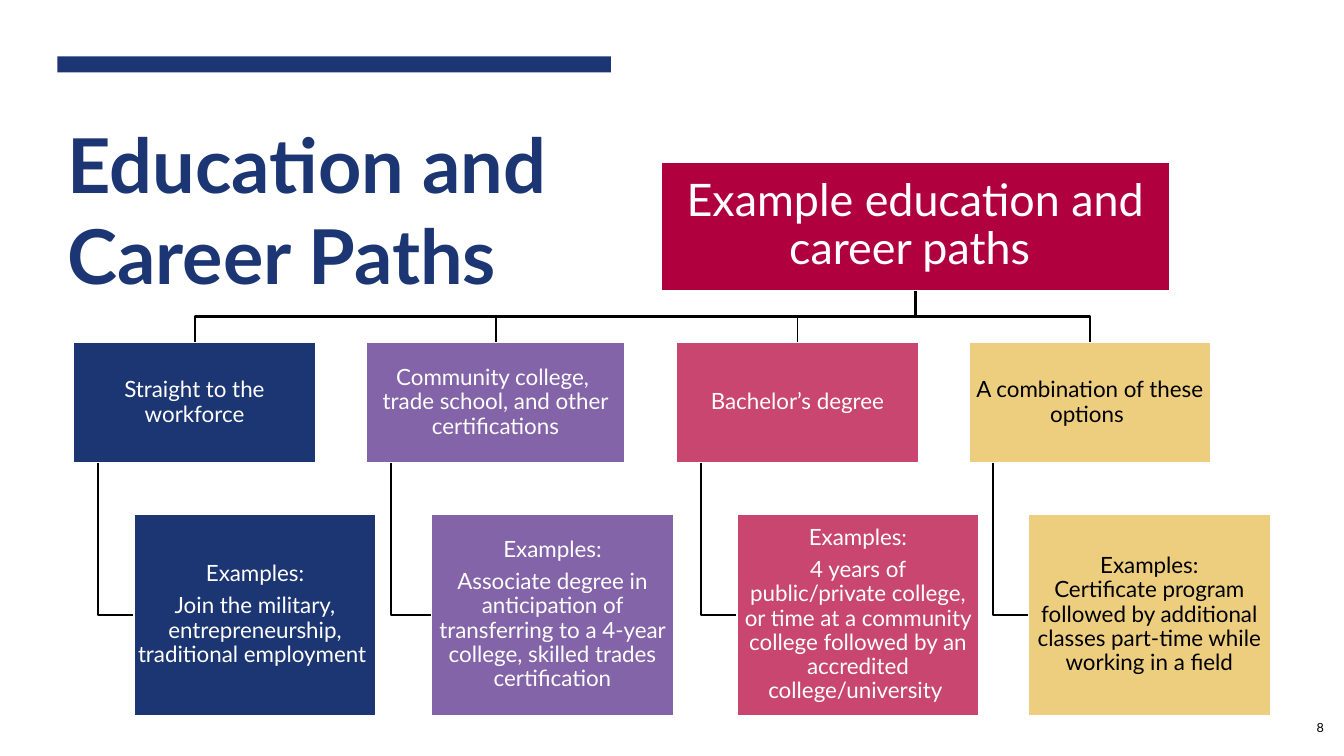
from dataclasses import dataclass

from pptx import Presentation
from pptx.dml.color import RGBColor
from pptx.enum.shapes import MSO_SHAPE as Preset
from pptx.enum.text import MSO_ANCHOR as Anchor, PP_ALIGN as Align
from pptx.shapes.autoshape import Shape
from pptx.slide import Slide
from pptx.util import Pt

PX = 9144  # EMU in one px, 100 px to the inch
FONT = "Lato"
NAVY, CRIMSON, PURPLE, ROSE, SAND = "1C3674", "B1003E", "8464A9", "C8466F", "EDCE7F"
WHITE, BLACK = "FFFFFF", "000000"

# Rows of the chart
ROOT_LEFT, ROOT_TOP, ROOT_WIDTH, ROOT_HEIGHT = 656, 161, 504, 127
ROOT_CENTRE, ROOT_BOTTOM = ROOT_LEFT + ROOT_WIDTH // 2, ROOT_TOP + ROOT_HEIGHT
BUS_Y = 314
PATH_TOP, PATH_HEIGHT = 340, 119
EXAMPLE_TOP, EXAMPLE_WIDTH, EXAMPLE_HEIGHT = 510, 240, 200


@dataclass
class CareerPath:
    left: int
    width: int
    example_left: int
    fill: str
    ink: str
    name: str
    examples: str
    branch_weight: float = 1.5


# "\n" starts a paragraph, "\v" breaks a line
PATHS = [
    CareerPath(73, 240, 133, NAVY, WHITE, "Straight to the workforce",
               "Examples:\nJoin the military, entrepreneurship, traditional employment "),
    CareerPath(363, 257, 428, PURPLE, WHITE,
               "Community college, \vtrade school, and other certifications",
               "Examples:\nAssociate degree in anticipation of transferring to a 4-year "
               "college, skilled trades certification"),
    CareerPath(671, 240, 731, ROSE, WHITE, "Bachelor’s degree",
               "Examples:\n4 years of public/private college, or time at a community "
               "college followed by an accredited college/university ", 0.5),
    CareerPath(961, 240, 1020, SAND, BLACK, "A combination of these options ",
               "Examples:\vCertificate program followed by additional classes part-time "
               "while working in a field"),
]


def colour(value: str) -> RGBColor:
    return RGBColor.from_string(value)


def write(shape: Shape, text: str, size: int, ink: str, align: Align, bold: bool = False) -> None:
    frame = shape.text_frame
    frame.word_wrap = True
    frame.vertical_anchor = Anchor.MIDDLE
    frame.text = text
    for para in frame.paragraphs:
        para.alignment = align
        for span in para.runs:
            font = span.font
            font.name, font.size, font.bold = FONT, Pt(size), bold
            font.color.rgb = colour(ink)


def add_bar(page: Slide, left: int, top: int, width: int, height: int, fill: str) -> Shape:
    bar = page.shapes.add_shape(Preset.RECTANGLE, left * PX, top * PX, width * PX, height * PX)
    bar.shadow.inherit = False
    bar.fill.solid()
    bar.fill.fore_color.rgb = colour(fill)
    bar.line.fill.background()
    return bar


def add_box(page: Slide, left: int, top: int, width: int, height: int,
            fill: str, ink: str, text: str, size: int = 16) -> None:
    box = add_bar(page, left, top, width, height, fill)
    box.line.color.rgb = colour(WHITE)
    box.line.width = Pt(1)
    write(box, text, size, ink, Align.CENTER)
    frame = box.text_frame
    frame.margin_left = frame.margin_right = frame.margin_top = frame.margin_bottom = 3 * PX
    for para in frame.paragraphs:
        para.line_spacing = 0.9
        para.space_after = Pt(0.35 * size)


def add_text(page: Slide, left: int, top: int, width: int, height: int,
             text: str, size: int, ink: str, align: Align, bold: bool = False) -> None:
    label = page.shapes.add_textbox(left * PX, top * PX, width * PX, height * PX)
    write(label, text, size, ink, align, bold)


def add_bend(page: Slide, points: list[tuple[int, int]], weight: float = 1.5) -> None:
    builder = page.shapes.build_freeform(*points[0], scale=PX)
    builder.add_line_segments(points[1:], close=False)
    bend = builder.convert_to_shape()
    bend.shadow.inherit = False
    bend.fill.background()
    bend.line.color.rgb = colour(BLACK)
    bend.line.width = Pt(weight)


def main() -> None:
    deck = Presentation()
    deck.slide_width, deck.slide_height = 1333 * PX, 750 * PX
    page = deck.slides.add_slide(deck.slide_layouts[6])

    # Heading
    add_bar(page, 57, 56, 549, 16, NAVY)
    add_text(page, 57, 107, 512, 200, "Education and Career Paths", 54, NAVY, Align.LEFT, True)

    # Lines from the root to each path, and from each path to its examples
    for path in PATHS:
        centre = path.left + (path.width + 1) // 2
        add_bend(page, [(ROOT_CENTRE, ROOT_BOTTOM), (ROOT_CENTRE, BUS_Y),
                        (centre, BUS_Y), (centre, PATH_TOP)], path.branch_weight)
        stem = path.left + path.width // 10
        middle = EXAMPLE_TOP + EXAMPLE_HEIGHT // 2
        add_bend(page, [(stem, PATH_TOP + PATH_HEIGHT), (stem, middle),
                        (path.example_left, middle)])

    # Boxes
    add_box(page, ROOT_LEFT, ROOT_TOP, ROOT_WIDTH, ROOT_HEIGHT, CRIMSON, WHITE,
            "Example education and career paths ", 32)
    for path in PATHS:
        add_box(page, path.left, PATH_TOP, path.width, PATH_HEIGHT,
                path.fill, path.ink, path.name)
        add_box(page, path.example_left, EXAMPLE_TOP, EXAMPLE_WIDTH, EXAMPLE_HEIGHT,
                path.fill, path.ink, path.examples)

    # Page number
    add_text(page, 1253, 702, 70, 40, "8", 9, BLACK, Align.RIGHT)

    deck.save("out.pptx")


if __name__ == "__main__":
    main()
